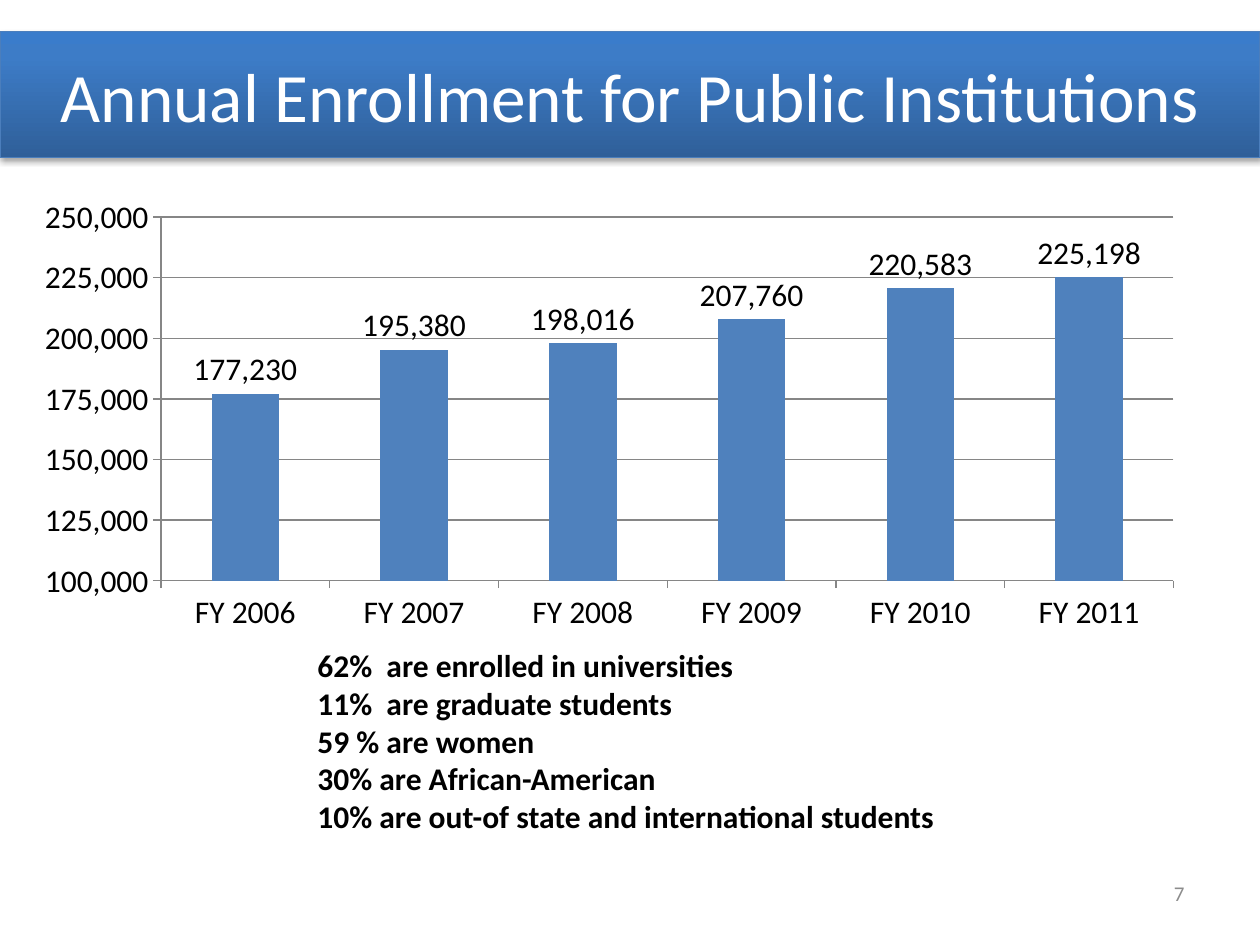
from copy import deepcopy

from lxml import etree
from pptx import Presentation
from pptx.chart.data import CategoryChartData
from pptx.dml.color import RGBColor
from pptx.enum.chart import XL_CHART_TYPE, XL_LABEL_POSITION, XL_TICK_MARK
from pptx.enum.text import MSO_ANCHOR, MSO_AUTO_SIZE, PP_ALIGN
from pptx.oxml import parse_xml
from pptx.oxml.ns import qn
from pptx.util import Cm, Pt

COLUMNS = XL_CHART_TYPE.COLUMN_CLUSTERED
OUTSIDE_END = XL_LABEL_POSITION.OUTSIDE_END
TICK_OUTSIDE = XL_TICK_MARK.OUTSIDE
TOP, MIDDLE = MSO_ANCHOR.TOP, MSO_ANCHOR.MIDDLE
LEFT, CENTER, RIGHT = PP_ALIGN.LEFT, PP_ALIGN.CENTER, PP_ALIGN.RIGHT

FONT = "Calibri"
NUMBER_FORMAT = "#,##0"
TITLE = "Annual Enrollment for Public Institutions"
PAGE_NUMBER = "7"
ENROLLMENT = {
    "FY 2006": 177230,
    "FY 2007": 195380,
    "FY 2008": 198016,
    "FY 2009": 207760,
    "FY 2010": 220583,
    "FY 2011": 225198,
}
FACTS = [
    "62%  are enrolled in universities",
    "11%  are graduate students",
    "59 % are women",
    "30% are African-American",
    "10% are out-of state and international students",
]
BANNER_STOPS = [(0, "2F5F99"), (0.8, "3D7CC7"), (1, "3A7CCB")]
BANNER_SHADOW = (
    '<a:effectLst xmlns:a="http://schemas.openxmlformats.org/drawingml/2006/main">'
    '<a:outerShdw blurRad="39370" dist="22860" dir="5400000" rotWithShape="0">'
    '<a:srgbClr val="000000"><a:alpha val="35000"/></a:srgbClr>'
    "</a:outerShdw></a:effectLst>"
)


def color(value):
    return RGBColor.from_string(value)


def format_font(font, size, value, bold=False):
    font.name = FONT
    font.size = Pt(size)
    font.bold = bold
    font.color.rgb = color(value)


def write(shape, lines, size, value="000000", bold=False, align=LEFT, anchor=TOP):
    frame = shape.text_frame
    frame.word_wrap = True
    frame.auto_size = MSO_AUTO_SIZE.NONE
    frame.vertical_anchor = anchor
    frame.text = "\n".join(lines)
    for paragraph in frame.paragraphs:
        paragraph.alignment = align
        for run in paragraph.runs:
            format_font(run.font, size, value, bold)


def style_banner(banner):
    banner.left, banner.top = Cm(0), Cm(0.64)
    banner.width, banner.height = Cm(25.4), Cm(2.54)
    banner.fill.gradient()
    banner.fill.gradient_angle = 90
    properties = banner.element.spPr
    stop_list = properties.find(".//" + qn("a:gsLst"))
    stop_list.append(deepcopy(stop_list[0]))
    for stop, (position, value) in zip(banner.fill.gradient_stops, BANNER_STOPS):
        stop.position = position
        stop.color.rgb = color(value)
    banner.line.color.rgb = color("4B7EBC")
    banner.line.width = Pt(0.75)
    properties.append(parse_xml(BANNER_SHADOW))


def add_enrollment_chart(slide):
    data = CategoryChartData(number_format=NUMBER_FORMAT)
    data.categories = list(ENROLLMENT)
    data.add_series("Series 1", list(ENROLLMENT.values()))
    chart = slide.shapes.add_chart(
        COLUMNS, Cm(0.43), Cm(3.81), Cm(23.7), Cm(9.1), data
    ).chart
    chart.has_legend = False
    chart.has_title = False
    format_font(chart.font, 18, "000000")

    plot = chart.plots[0]
    plot.gap_width = 150
    plot.vary_by_categories = False
    series = plot.series[0]
    series.format.fill.solid()
    series.format.fill.fore_color.rgb = color("4F81BD")
    labels = series.data_labels
    labels.show_value = True
    labels.position = OUTSIDE_END
    labels.number_format = NUMBER_FORMAT
    labels.number_format_is_linked = False

    values = chart.value_axis
    values.minimum_scale, values.maximum_scale = 100000, 250000
    values.major_unit = 25000
    values.has_major_gridlines = True
    values.tick_labels.number_format = NUMBER_FORMAT
    values.tick_labels.number_format_is_linked = False
    for axis in (chart.category_axis, values):
        axis.major_tick_mark = TICK_OUTSIDE
    for part in (chart.category_axis, values, values.major_gridlines):
        part.format.line.color.rgb = color("868686")
        part.format.line.width = Pt(0.75)


def main():
    presentation = Presentation()
    presentation.slide_width, presentation.slide_height = Cm(25.4), Cm(19.05)
    slide = presentation.slides.add_slide(presentation.slide_layouts[5])

    banner = slide.shapes.title
    style_banner(banner)
    write(banner, [TITLE], 39.6, "FFFFFF", align=CENTER, anchor=MIDDLE)
    add_enrollment_chart(slide)
    number = slide.shapes.add_textbox(Cm(18.21), Cm(17.35), Cm(5.92), Cm(1.32))
    write(number, [PAGE_NUMBER], 12, "8C8C8C", align=RIGHT, anchor=MIDDLE)
    facts = slide.shapes.add_textbox(Cm(6.15), Cm(12.9), Cm(15.88), Cm(4.11))
    write(facts, FACTS, 18, bold=True)

    presentation.save("out.pptx")


if __name__ == "__main__":
    main()
